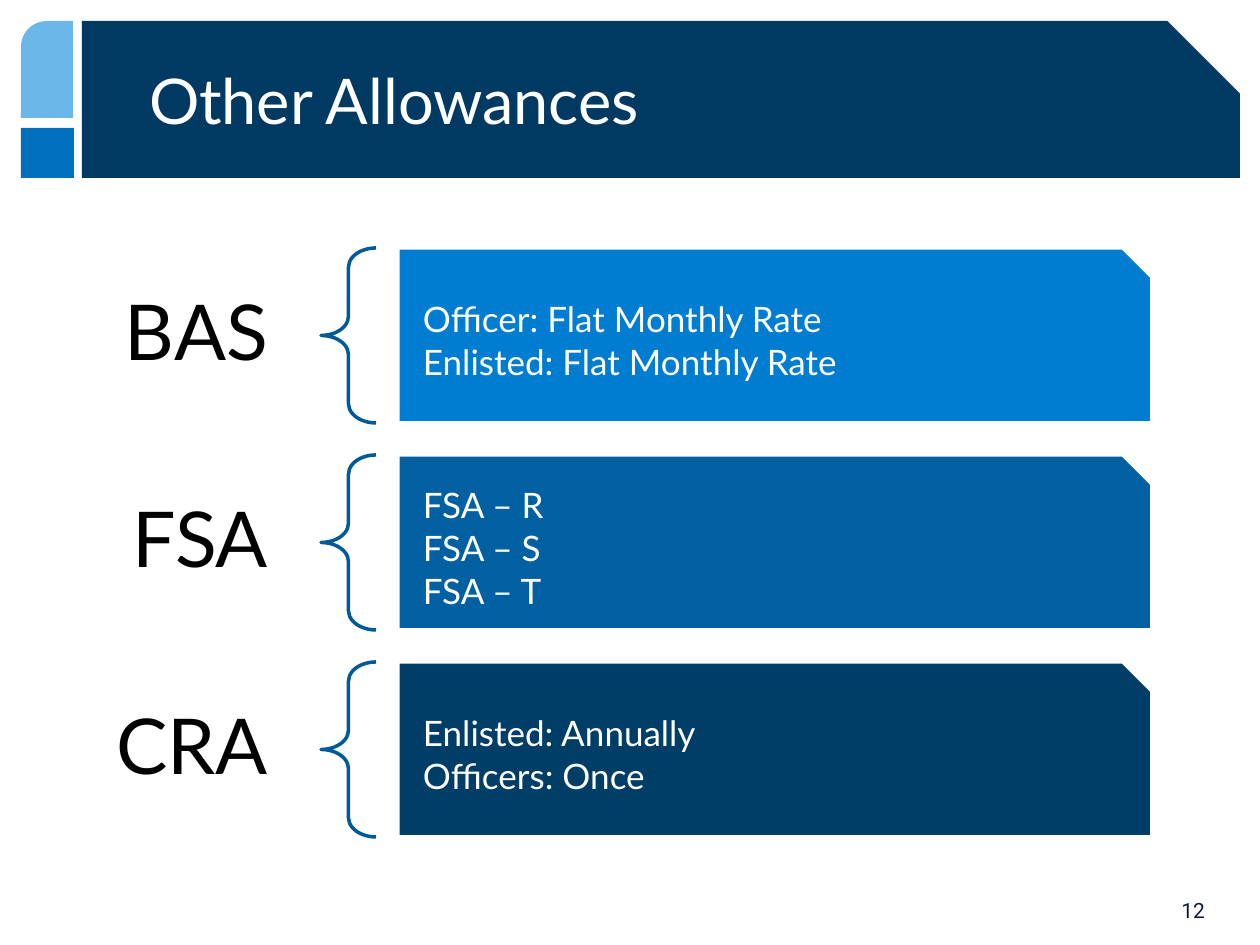
from pptx import Presentation
from pptx.dml.color import RGBColor
from pptx.enum.shapes import MSO_SHAPE
from pptx.enum.text import MSO_ANCHOR, PP_ALIGN
from pptx.util import Pt

PX = 914400 / 126
COLORS = {
    "banner": "003A62", "square": "0071BC", "tab": "6CB7EA",
    "brace": "005A97", "white": "FFFFFF", "black": "000000", "number": "111845",
    "BAS": "007CD0", "FSA": "0060A2", "CRA": "003E68",
}
ALLOWANCES = {
    "BAS": ["Officer: Flat Monthly Rate", "Enlisted: Flat Monthly Rate"],
    "FSA": ["FSA – R", "FSA – S", "FSA – T"],
    "CRA": ["Enlisted: Annually", "Officers: Once"],
}
ROW_HEIGHT, ROW_STEP = 175, 207


def emu(*lengths):
    return [round(length * PX) for length in lengths]


def rgb(name):
    return RGBColor.from_string(COLORS[name])


def add_block(page, preset, box, fill=None, line=None, adjustments=()):
    block = page.shapes.add_shape(preset, *emu(*box))
    block.shadow.inherit = False
    for index, value in enumerate(adjustments):
        block.adjustments[index] = value
    if fill:
        block.fill.solid()
        block.fill.fore_color.rgb = rgb(fill)
    else:
        block.fill.background()
    if line:
        block.line.color.rgb = rgb(line)
        block.line.width = Pt(2)
    else:
        block.line.fill.background()
    return block


def write(shape, lines, size, color, font="Lato", margins=(13, 6),
          align=PP_ALIGN.LEFT, **spacing):
    frame = shape.text_frame
    side, top = emu(*margins)
    settings = {
        "word_wrap": True, "vertical_anchor": MSO_ANCHOR.MIDDLE,
        "margin_left": side, "margin_right": side,
        "margin_top": top, "margin_bottom": top,
    }
    for name, value in settings.items():
        setattr(frame, name, value)
    for index, line in enumerate(lines):
        para = frame.add_paragraph() if index else frame.paragraphs[0]
        for name, value in {"alignment": align, **spacing}.items():
            setattr(para, name, value)
        span = para.add_run()
        span.text = line
        for name, value in {"name": font, "size": Pt(size), "bold": False}.items():
            setattr(span.font, name, value)
        span.font.color.rgb = rgb(color)


def add_header(page, left, top, height):
    add_block(page, MSO_SHAPE.SNIP_1_RECTANGLE, (left + 61, top, 1158, height),
              "banner", adjustments=[0.463])
    add_block(page, MSO_SHAPE.RECTANGLE, (left, top + 107, 53, height - 107), "square")
    tab = add_block(page, MSO_SHAPE.ROUND_1_RECTANGLE, (left, top, 52, 97),
                    "tab", adjustments=[0.5])
    tab._element.spPr.xfrm.set("flipH", "1")

    title = page.shapes.title
    page.shapes._spTree.append(title._element)  # bring in front of the banner
    title.left, title.top, title.width, title.height = emu(left + 115, top, 1029, height)
    write(title, ["Other Allowances"], 36, "white")


def add_allowance(page, name, lines, left, top, height):
    label = page.shapes.add_textbox(*emu(left, top, 277, height))
    write(label, [name], 44, "black", margins=(53, 19),
          align=PP_ALIGN.RIGHT, line_spacing=0.9)
    add_block(page, MSO_SHAPE.LEFT_BRACE, (left + 277, top, 55, height),
              line="brace", adjustments=[0.35, 0.5])
    panel = add_block(page, MSO_SHAPE.SNIP_1_RECTANGLE, (left + 354, top, 754, height),
                      name, "white")
    write(panel, lines, 20, "white", margins=(25, 10),
          line_spacing=0.9, space_after=Pt(3))


def add_page_number(page, box):
    number = page.shapes.add_textbox(*emu(*box))
    write(number, ["12"], 12, "number", font="Roboto", align=PP_ALIGN.RIGHT)


def main():
    deck = Presentation()
    deck.slide_width, deck.slide_height = emu(1260, 945)
    page = deck.slides.add_slide(deck.slide_layouts[5])
    add_header(page, 21, 21, 157)
    for row, (name, lines) in enumerate(ALLOWANCES.items()):
        add_allowance(page, name, lines, 44, 248 + row * ROW_STEP, ROW_HEIGHT)
    add_page_number(page, (924, 885, 294, 50))
    deck.save("out.pptx")


if __name__ == "__main__":
    main()
